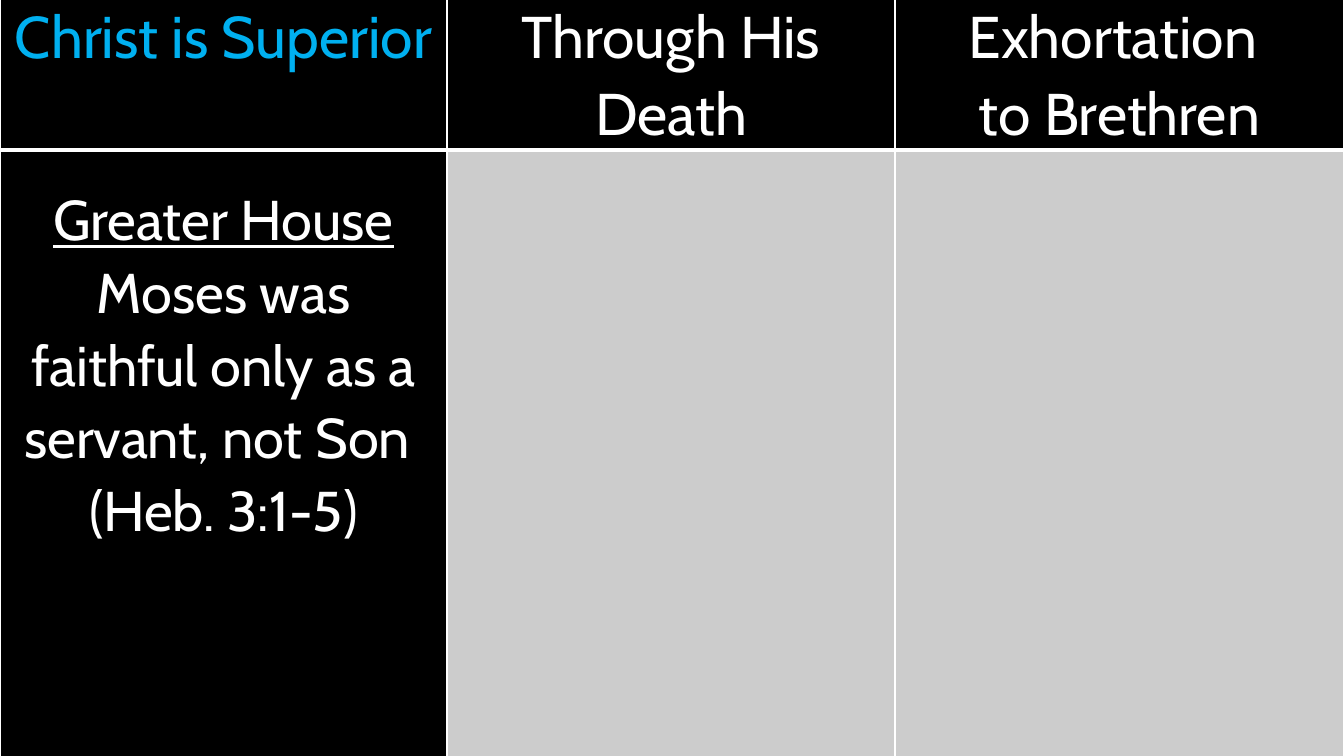
"""Build the slide comparing Christ's greater house with that of Moses."""
from lxml import etree
from pptx import Presentation
from pptx.dml.color import RGBColor
from pptx.enum.text import PP_ALIGN
from pptx.oxml.ns import qn
from pptx.util import Pt

CENTER = PP_ALIGN.CENTER
PX = 9071.43
COLORS = {"black": "000000", "white": "FFFFFF", "blue": "00B0F0", "gray": "CCCCCC"}
COLUMN_WIDTHS = [447, 448, 449]
ROW_HEIGHTS = [169, 638]
TOP_MARGINS = [17, 32]
FONT_SIZES = [42, 40]
ROWS = [
    [["Christ is Superior"], ["Through His Death"], ["Exhortation ", "to Brethren"]],
    [
        ["Greater House", "Moses was faithful only as a servant, not Son ", "(Heb. 3:1-5)"],
        [],
        [],
    ],
]


def px(value):
    return round(value * PX)


def add_border(cell, side, points):
    properties = cell._tc.get_or_add_tcPr()
    line = etree.SubElement(properties, qn(f"a:ln{side}"), w=str(Pt(points)))
    fill = etree.SubElement(line, qn("a:solidFill"))
    etree.SubElement(fill, qn("a:srgbClr"), val=COLORS["white"])


presentation = Presentation()
presentation.slide_width = px(1344)
presentation.slide_height = px(756)
slide = presentation.slides.add_slide(presentation.slide_layouts[6])
slide.background.fill.solid()
slide.background.fill.fore_color.rgb = RGBColor.from_string(COLORS["black"])

table_frame = slide.shapes.add_table(
    2, 3, 0, px(-20), px(sum(COLUMN_WIDTHS)), px(sum(ROW_HEIGHTS))
)
table = table_frame.table
table.horz_banding = False
for column, width in zip(table.columns, COLUMN_WIDTHS):
    column.width = px(width)

for row_index, row_texts in enumerate(ROWS):
    table.rows[row_index].height = px(ROW_HEIGHTS[row_index])
    for column_index, lines in enumerate(row_texts):
        cell = table.cell(row_index, column_index)
        cell.margin_left = cell.margin_right = px(9)
        cell.margin_top = px(TOP_MARGINS[row_index])
        cell.margin_bottom = 0
        widths = {"L": 1, "R": 1, "T": 1, "B": 1}
        widths["T" if row_index else "B"] = 3
        for side, points in widths.items():
            add_border(cell, side, points)
        cell.fill.solid()
        cell.fill.fore_color.rgb = RGBColor.from_string(COLORS["black" if lines else "gray"])

        cell.text_frame.text = "\n".join(lines)
        is_heading = row_index == 0 and column_index == 0
        text_color = COLORS["blue" if is_heading else "white"]
        for paragraph in cell.text_frame.paragraphs:
            paragraph.alignment = CENTER
            paragraph.line_spacing = 1.07
            for run in paragraph.runs:
                run.font.name = "Cabin"
                run.font.size = Pt(FONT_SIZES[row_index])
                run.font.bold = False
                run.font.underline = run.text == "Greater House"
                run.font.color.rgb = RGBColor.from_string(text_color)

presentation.save("out.pptx")
